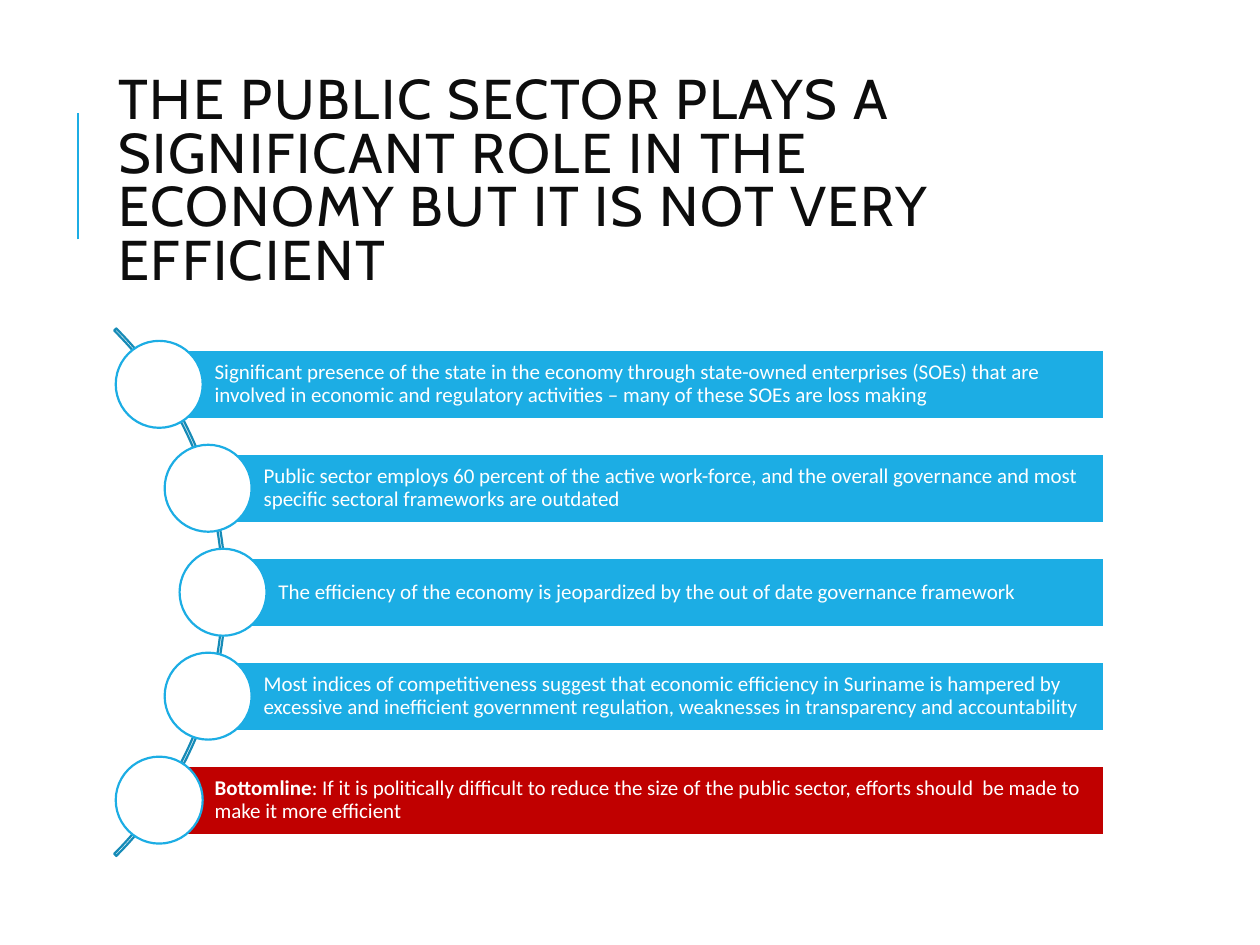
from math import sqrt

from lxml.etree import SubElement
from pptx import Presentation
from pptx.dml.color import RGBColor
from pptx.enum.shapes import MSO_CONNECTOR, MSO_SHAPE
from pptx.enum.text import MSO_ANCHOR, PP_ALIGN
from pptx.oxml.ns import qn
from pptx.util import Inches, Pt

BLUE, DARK_BLUE, RED, WHITE, INK = "1CADE4", "168BB7", "C00000", "FFFFFF", "0D0D0D"
TITLE = "THE PUBLIC SECTOR PLAYS A SIGNIFICANT ROLE IN THE ECONOMY BUT IT IS NOT VERY EFFICIENT"
POINTS = [
    ("", "Significant presence of the state in the economy through state-owned enterprises (SOEs) "
         "that are involved in economic and regulatory activities – many of these SOEs are loss making"),
    ("", "Public sector employs 60 percent of the active work-force, and the overall governance "
         "and most specific sectoral frameworks are outdated"),
    ("", "The efficiency of the economy is jeopardized by the out of date governance framework"),
    ("", "Most indices of competitiveness suggest that economic efficiency in Suriname is hampered by "
         "excessive and inefficient government regulation, weaknesses in transparency and accountability"),
    ("Bottomline", ": If it is politically difficult to reduce the size of the public sector, "
                   "efforts should  be made to make it more efficient"),
]
ARC_LEFT, ARC_TOP, ARC_SIZE = -4.13, 1.74, 5.92
CIRCLE_RADIUS, ORBIT_RADIUS = 0.345, 2.94
BAR_RIGHT, BAR_HEIGHT, PITCH = 8.76, 0.55, 0.825


def color(hex_value):
    return RGBColor.from_string(hex_value)


def apply(target, values):
    for name, value in values.items():
        setattr(target, name, value)


class Deck:
    """Holds the text styles and the current slide, and draws each kind of element."""

    title_frame = {"word_wrap": True, "vertical_anchor": MSO_ANCHOR.MIDDLE}
    bar_frame = {**title_frame, "margin_left": Inches(0.44), "margin_right": Inches(0.03),
                 "margin_top": Inches(0.03), "margin_bottom": Inches(0.03)}
    title_font = {"name": "Cabin", "size": Pt(32)}
    bar_font = {"name": "Calibri", "size": Pt(12)}

    def __init__(self, slide):
        self.slide = slide

    def shape(self, preset, left, top, width, height, fill, line):
        shape = self.slide.shapes.add_shape(
            preset, Inches(left), Inches(top), Inches(width), Inches(height))
        shape.shadow.inherit = False
        if fill:
            shape.fill.solid()
            shape.fill.fore_color.rgb = color(fill)
        else:
            shape.fill.background()
        shape.line.color.rgb = color(line)
        shape.line.width = Pt(1.25)
        return shape

    def text(self, frame, runs, frame_format, font, ink, line_spacing):
        apply(frame, frame_format)
        paragraph = frame.paragraphs[0]
        apply(paragraph, {"alignment": PP_ALIGN.LEFT, "line_spacing": line_spacing})
        for words, bold in runs:
            run = paragraph.add_run()
            run.text = words
            apply(run.font, {**font, "bold": bold})
            run.font.color.rgb = color(ink)
        return paragraph

    def title(self, words):
        box = self.slide.shapes.add_textbox(Inches(0.84), Inches(0.64), Inches(7.97), Inches(1.64))
        paragraph = self.text(box.text_frame, [(words, False)], self.title_frame,
                              self.title_font, INK, 0.8)
        paragraph.runs[0].font._element.set("spc", "100")

    def accent(self, x, start, end):
        accent = self.slide.shapes.add_connector(
            MSO_CONNECTOR.STRAIGHT, Inches(x), Inches(start), Inches(x), Inches(end))
        accent.line.color.rgb = color(BLUE)
        accent.line.width = Pt(1.5)
        SubElement(accent._element.spPr, qn("a:effectLst"))

    def arc(self):
        arc = self.shape(MSO_SHAPE.BLOCK_ARC, ARC_LEFT, ARC_TOP, ARC_SIZE, ARC_SIZE, None, DARK_BLUE)
        for index, value in enumerate((189, 27, 0.004)):
            arc.adjustments[index] = value

    def point(self, x, y, lead, words):
        bar = self.shape(MSO_SHAPE.RECTANGLE, x, y - BAR_HEIGHT / 2, BAR_RIGHT - x, BAR_HEIGHT,
                         RED if lead else BLUE, WHITE)
        runs = [(part, part == lead) for part in (lead, words) if part]
        self.text(bar.text_frame, runs, self.bar_frame, self.bar_font, WHITE, 0.9)
        self.shape(MSO_SHAPE.OVAL, x - CIRCLE_RADIUS, y - CIRCLE_RADIUS,
                   2 * CIRCLE_RADIUS, 2 * CIRCLE_RADIUS, WHITE, BLUE)


def main():
    presentation = Presentation()
    apply(presentation, {"slide_width": Inches(10), "slide_height": Inches(7.5)})
    deck = Deck(presentation.slides.add_slide(presentation.slide_layouts[6]))
    deck.accent(0.62, 1.9, 0.9)
    deck.title(TITLE)
    deck.arc()
    center_x, center_y = ARC_LEFT + ARC_SIZE / 2, ARC_TOP + ARC_SIZE / 2
    for index, (lead, words) in enumerate(POINTS):
        rise = (index - len(POINTS) // 2) * PITCH
        deck.point(center_x + sqrt(ORBIT_RADIUS ** 2 - rise ** 2), center_y + rise, lead, words)
    presentation.save("out.pptx")


if __name__ == "__main__":
    main()
